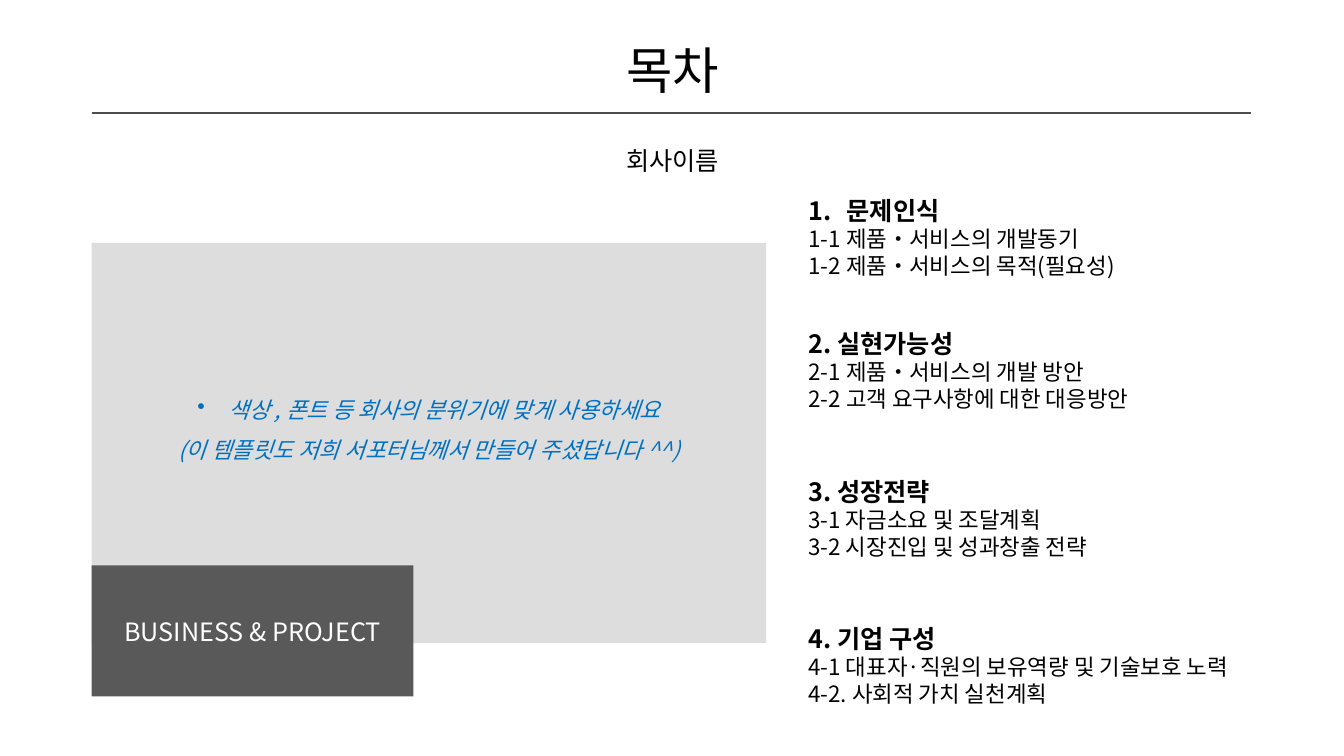
from pptx import Presentation
from pptx.dml.color import RGBColor
from pptx.enum import shapes, text
from pptx.oxml.ns import qn
from pptx.util import Inches, Pt

FONT = "Noto Sans CJK KR"
CENTER = text.PP_ALIGN.CENTER
LEFT = text.PP_ALIGN.LEFT

SECTIONS = [
    (1.88, 3.42, ["문제인식", "1-1 제품‧서비스의 개발동기",
                  "1-2 제품‧서비스의 목적(필요성)"]),
    (3.2, 3.78, ["2. 실현가능성", "2-1 제품‧서비스의 개발 방안",
                 "2-2 고객 요구사항에 대한 대응방안"]),
    (4.67, 3.33, ["3. 성장전략", "3-1 자금소요 및 조달계획",
                  "3-2 시장진입 및 성과창출 전략"]),
    (6.13, 4.8, ["4. 기업 구성", "4-1 대표자·직원의 보유역량 및 기술보호 노력",
                 "4-2. 사회적 가치 실천계획"]),
]


def rgb(value):
    return RGBColor.from_string(value)


def add_bullet(paragraph, indent, tag, **attributes):
    """Give the paragraph a hanging indent and a bullet element."""
    properties = paragraph._p.get_or_add_pPr()
    properties.set("marL", str(Inches(indent)))
    properties.set("indent", str(-Inches(indent)))
    bullet = properties.makeelement(qn(tag), attributes)
    properties.append(bullet)


def style(paragraph, size, color="000000", align=LEFT, bold=False, italic=False):
    paragraph.alignment = align
    for run in paragraph.runs:
        font = run.font
        font.size, font.bold, font.italic = Pt(size), bold, italic
        font.color.rgb = rgb(color)
        font.name = FONT
        properties = run._r.get_or_add_rPr()
        properties.append(properties.makeelement(qn("a:ea"), {"typeface": FONT}))


def add_text(slide, left, top, width, height, content):
    box = slide.shapes.add_textbox(
        Inches(left), Inches(top), Inches(width), Inches(height))
    frame = box.text_frame
    frame.word_wrap = True
    frame.text = content
    return frame


def add_panel(slide, left, top, width, height, fill, content):
    panel = slide.shapes.add_shape(
        shapes.MSO_SHAPE.RECTANGLE,
        Inches(left), Inches(top), Inches(width), Inches(height))
    panel.shadow.inherit = False
    panel.fill.solid()
    panel.fill.fore_color.rgb = rgb(fill)
    panel.line.fill.background()
    frame = panel.text_frame
    frame.word_wrap = True
    frame.vertical_anchor = text.MSO_ANCHOR.MIDDLE
    frame.text = content
    return frame


def add_rule(slide, left, right, y):
    rule = slide.shapes.add_connector(
        shapes.MSO_CONNECTOR.STRAIGHT,
        Inches(left), Inches(y), Inches(right), Inches(y))
    rule.line.color.rgb = rgb("4D4D4D")
    rule.line.width = Pt(1)
    properties = rule._element.spPr
    properties.append(properties.makeelement(qn("a:effectLst"), {}))


def add_section(slide, top, width, lines):
    frame = add_text(slide, 7.92, top, width, 0.94, "\n".join(lines))
    frame.vertical_anchor = text.MSO_ANCHOR.MIDDLE
    heading, *items = frame.paragraphs
    if not lines[0][0].isdigit():
        add_bullet(heading, 0.38, "a:buAutoNum", type="arabicPeriod")
    style(heading, 18, bold=True)
    for item in items:
        style(item, 16)


def main():
    deck = Presentation()
    deck.slide_width, deck.slide_height = Inches(13.33), Inches(7.5)
    slide = deck.slides.add_slide(deck.slide_layouts[6])

    title = add_text(slide, 3.39, 0.34, 6.56, 0.71, "목차")
    style(title.paragraphs[0], 36, align=CENTER)
    add_rule(slide, 0.91, 12.41, 1.12)
    company = add_text(slide, 0.95, 1.39, 11.44, 0.4, "회사이름")
    style(company.paragraphs[0], 18, align=CENTER)

    guide = add_panel(slide, 0.91, 2.41, 6.69, 3.97, "DDDDDD",
                      "색상 , 폰트 등 회사의 분위기에 맞게 사용하세요\n"
                      "(이 템플릿도 저희 서포터님께서 만들어 주셨답니다 ^^)")
    guide.margin_bottom = Inches(0.45)
    add_bullet(guide.paragraphs[0], 0.31, "a:buChar", char="•")
    for paragraph in guide.paragraphs:
        style(paragraph, 16, "0070C0", CENTER, italic=True)
        paragraph.line_spacing = 1.5

    label = add_panel(slide, 0.91, 5.61, 3.19, 1.3, "595959", "BUSINESS & PROJECT")
    style(label.paragraphs[0], 18, "FFFFFF", CENTER)

    for top, width, lines in SECTIONS:
        add_section(slide, top, width, lines)

    deck.save("out.pptx")


if __name__ == "__main__":
    main()
